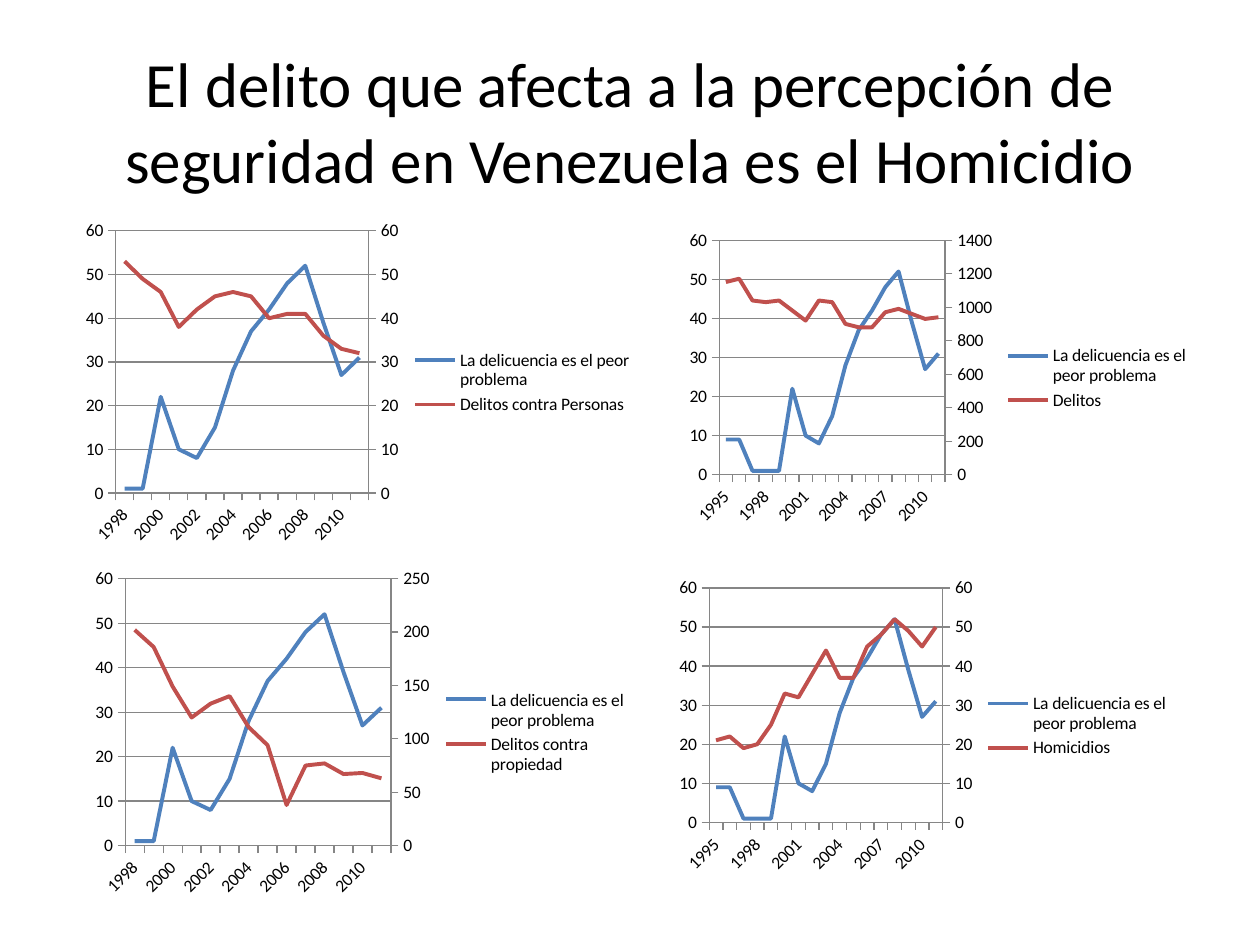
from copy import deepcopy
from dataclasses import dataclass

from pptx import Presentation
from pptx.chart.axis import CategoryAxis, ValueAxis
from pptx.chart.data import CategoryChartData
from pptx.dml.color import RGBColor
from pptx.enum.chart import XL_CHART_TYPE as ChartType
from pptx.enum.chart import XL_LEGEND_POSITION as LegendPosition
from pptx.enum.chart import XL_TICK_MARK as TickMark
from pptx.enum.text import MSO_ANCHOR, PP_ALIGN
from pptx.oxml.ns import qn
from pptx.util import Cm, Pt

FONT = "Calibri"
COLORS = {"text": "000000", "perception": "4F81BD", "crime": "C0504D", "axis": "868686"}
LAST_YEAR = 2011
PERCEPTION_NAME = "La delicuencia es el peor problema"
PERCEPTION = [9, 9, 1, 1, 1, 22, 10, 8, 15, 28, 37, 42, 48, 52, 39, 27, 31]


@dataclass
class CrimeChart:
    name: str
    values: list[int]
    right_maximum: int
    right_unit: int
    left: float
    top: float
    width: float
    height: float


CHARTS = [
    CrimeChart("Delitos contra Personas",
               [53, 49, 46, 38, 42, 45, 46, 45, 40, 41, 41, 36, 33, 32],
               60, 10, 1.5, 4.32, 11.51, 6.78),
    CrimeChart("Delitos contra propiedad",
               [202, 186, 149, 120, 133, 140, 111, 94, 38, 75, 77, 67, 68, 63],
               250, 50, 1.7, 11.33, 11.2, 6.88),
    CrimeChart("Delitos",
               [1150, 1170, 1040, 1030, 1040, 980, 920, 1040, 1030, 900, 880, 880,
                970, 990, 960, 930, 940],
               1400, 200, 13.69, 4.52, 10.54, 6.2),
    CrimeChart("Homicidios",
               [21, 22, 19, 20, 25, 33, 32, 38, 44, 37, 37, 45, 48, 52, 49, 45, 50],
               60, 10, 13.49, 11.53, 10.34, 6.2),
]


def color(name: str) -> RGBColor:
    return RGBColor.from_string(COLORS[name])


def style_line(line, name: str, width: float) -> None:
    line.color.rgb = color(name)
    line.width = Pt(width)


def set_scale(axis: ValueAxis, maximum: int, unit: int) -> None:
    axis.minimum_scale = 0
    axis.maximum_scale = maximum
    axis.major_unit = unit


def move_last_series_to_right_axis(chart) -> ValueAxis:
    """Split the second series into its own line plot and return its value axis."""
    left_plot = chart.plots[0]._element
    right_plot = deepcopy(left_plot)
    left_plot.remove(left_plot.findall(qn("c:ser"))[1])
    right_plot.remove(right_plot.findall(qn("c:ser"))[0])
    left_plot.addnext(right_plot)

    category = deepcopy(chart.category_axis._element)
    value = deepcopy(chart.value_axis._element)
    chart.value_axis._element.addnext(value)
    value.addnext(category)

    category_id, value_id = "50010", "50020"
    for element, own, crossing in ((category, category_id, value_id),
                                   (value, value_id, category_id)):
        element.find(qn("c:axId")).set("val", own)
        element.find(qn("c:crossAx")).set("val", crossing)
    for reference, number in zip(right_plot.findall(qn("c:axId")), (category_id, value_id)):
        reference.set("val", number)

    value.find(qn("c:axPos")).set("val", "r")
    value.find(qn("c:crosses")).set("val", "max")
    CategoryAxis(category).visible = False
    right_axis = ValueAxis(value)
    right_axis.has_major_gridlines = False
    return right_axis


def add_crime_chart(slide, item: CrimeChart) -> None:
    count = len(item.values)
    data = CategoryChartData(number_format="General")
    data.categories = [str(year) for year in range(LAST_YEAR - count + 1, LAST_YEAR + 1)]
    # The shorter charts start in 1998, where perception is already at 1
    data.add_series(PERCEPTION_NAME, PERCEPTION[-count:])
    data.add_series(item.name, item.values)
    chart = slide.shapes.add_chart(
        ChartType.LINE, Cm(item.left), Cm(item.top), Cm(item.width), Cm(item.height), data
    ).chart

    chart.has_title = False
    chart.font.name = FONT
    chart.font.size = Pt(10)
    chart.font.color.rgb = color("text")
    chart.has_legend = True
    chart.legend.position = LegendPosition.RIGHT
    chart.legend.include_in_layout = False

    plot = chart.plots[0]
    plot.vary_by_categories = False
    for series, name in zip(plot.series, ("perception", "crime")):
        series.smooth = False
        style_line(series.format.line, name, 2.25)

    for axis in (chart.category_axis, chart.value_axis):
        axis.major_tick_mark = TickMark.OUTSIDE
        axis.minor_tick_mark = TickMark.NONE
        style_line(axis.format.line, "axis", 0.75)
    labels = chart.category_axis.tick_labels
    labels.font.size = Pt(10)
    body = chart.category_axis._element.find(qn("c:txPr")).find(qn("a:bodyPr"))
    body.set("rot", "-2700000")
    chart.value_axis.has_major_gridlines = True
    style_line(chart.value_axis.major_gridlines.format.line, "axis", 0.75)

    right_axis = move_last_series_to_right_axis(chart)
    set_scale(chart.value_axis, 60, 10)
    set_scale(right_axis, item.right_maximum, item.right_unit)


def add_title(slide, text: str) -> None:
    title = slide.shapes.title
    title.left, title.top, title.width, title.height = Cm(1.27), Cm(0.76), Cm(22.86), Cm(3.18)
    title.text_frame.word_wrap = True
    title.text_frame.vertical_anchor = MSO_ANCHOR.MIDDLE
    title.text_frame.margin_top = Cm(0.28)
    paragraph = title.text_frame.paragraphs[0]
    paragraph.alignment = PP_ALIGN.CENTER
    run = paragraph.add_run()
    run.text = text
    run.font.name = FONT
    run.font.size = Pt(36)
    run.font.color.rgb = color("text")


def main() -> None:
    presentation = Presentation()
    presentation.slide_width, presentation.slide_height = Cm(25.4), Cm(19.05)
    slide = presentation.slides.add_slide(presentation.slide_layouts[5])
    add_title(slide, "El delito que afecta a la percepción de seguridad "
                     "en Venezuela es el Homicidio")
    for item in CHARTS:
        add_crime_chart(slide, item)
    presentation.save("out.pptx")


if __name__ == "__main__":
    main()
